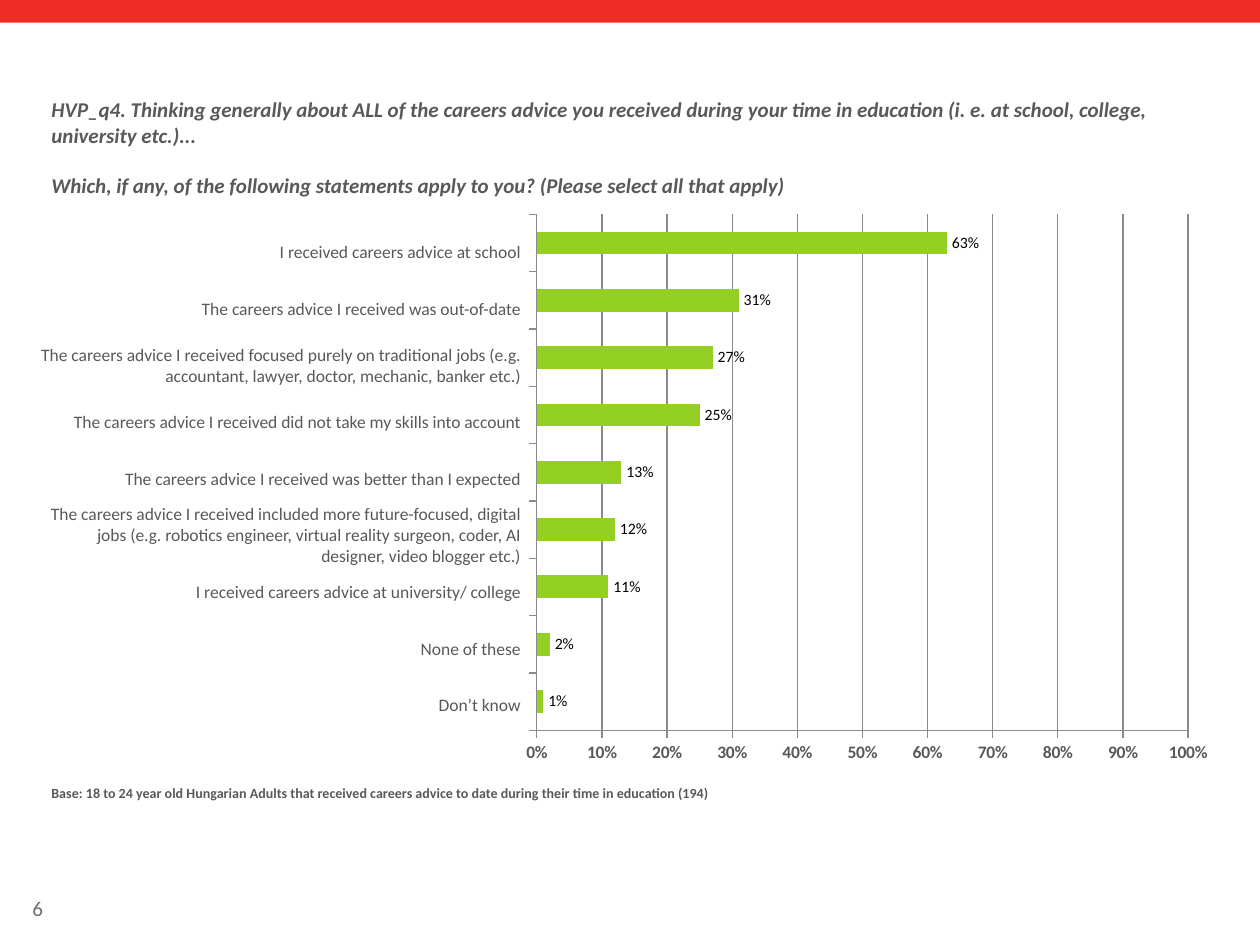
from lxml.etree import SubElement as Sub
from pptx import Presentation
from pptx.chart.data import CategoryChartData as Data
from pptx.dml.color import RGBColor as RGB
from pptx.enum.chart import XL_CHART_TYPE as Kind, XL_LABEL_POSITION as Spot
from pptx.enum.chart import XL_TICK_LABEL_POSITION as Tick, XL_TICK_MARK as Mark
from pptx.enum.shapes import MSO_SHAPE as Shape
from pptx.enum.text import MSO_ANCHOR as Anchor, PP_ALIGN as Align
from pptx.oxml.ns import qn
from pptx.util import Pt

ROWS = [
    ("I received careers advice at school", 0.63),
    ("The careers advice I received was out-of-date", 0.31),
    ("The careers advice I received focused purely on traditional jobs "
     "(e.g. accountant, lawyer, doctor, mechanic, banker etc.)", 0.27),
    ("The careers advice I received did not take my skills into account", 0.25),
    ("The careers advice I received was better than I expected", 0.13),
    ("The careers advice I received included more future-focused, digital jobs "
     "(e.g. robotics engineer, virtual reality surgeon, coder, AI designer, "
     "video blogger etc.)", 0.12),
    ("I received careers advice at university/ college", 0.11),
    ("None of these", 0.02),
    ("Don’t know", 0.01),
]
ASK = [
    "HVP_q4. Thinking generally about ALL of the careers advice you received "
    "during your time in education (i. e. at school, college, university etc.)...",
    "Which, if any, of the following statements apply to you? "
    "(Please select all that apply)",
]
BASE = ("Base: 18 to 24 year old Hungarian Adults that received careers advice "
        "to date during their time in education (194)")
PAGE = "6"
THEME = {
    "font": "Calibri", "chart": "Manrope",
    "band": RGB(0xEE, 0x2D, 0x27), "bar": RGB(0x93, 0xD0, 0x23),
    "ink": RGB(0x59, 0x59, 0x59), "page": RGB(0x6D, 0x6F, 0x71),
    "value": RGB(0, 0, 0), "line": RGB(0x8B, 0x8B, 0x8B),
    "head": 12, "label": 10, "mark": 9, "base": 8, "body": 18,
}
FRAME = {"x": 0.034, "y": 0.02, "w": 0.918, "h": 0.904}
TOP, STEP = 127.44, 32.4


def style(font, size, ink="ink", bold=False, face="font"):
    """Set the look of a font from the theme."""
    font.name, font.size, font.bold = THEME[face], Pt(THEME[size]), bold
    font.color.rgb = THEME[ink]


def write(slide, box, lines, size, ink="ink", bold=False, italic=False,
          align=Align.LEFT, anchor=Anchor.TOP, gap=0):
    """Add a text box with one paragraph for each line."""
    frame = slide.shapes.add_textbox(*map(Pt, box)).text_frame
    frame.word_wrap, frame.vertical_anchor = True, anchor
    frame.text = "\n".join(lines)
    for i, para in enumerate(frame.paragraphs):
        para.alignment = align
        para.space_before = Pt(gap if i else 0)
        for run in para.runs:
            style(run.font, size, ink, bold)
            run.font.italic = italic


def plot(slide):
    """Add the bar chart, lowest row first."""
    data = Data(number_format="0%")
    data.categories = [str(i + 1) for i in range(len(ROWS))]
    data.add_series("Series 1", [val for _, val in reversed(ROWS)])
    box = map(Pt, (293, 116, 405.4, 326.2))
    chart = slide.shapes.add_chart(Kind.BAR_CLUSTERED, *box, data).chart
    chart.has_legend = chart.has_title = False
    style(chart.font, "body", "page", face="chart")

    cat, val = chart.category_axis, chart.value_axis
    cat.tick_label_position, val.tick_label_position = Tick.NONE, Tick.LOW
    val.minimum_scale, val.maximum_scale, val.major_unit = 0, 1, 0.1
    val.has_major_gridlines = True
    val.tick_labels.number_format = "0%"
    val.tick_labels.number_format_is_linked = False
    for axis in (cat, val):
        axis.major_tick_mark, axis.minor_tick_mark = Mark.OUTSIDE, Mark.NONE
        style(axis.tick_labels.font, "label", bold=axis is val)
    for item in (cat.format, val.format, val.major_gridlines.format):
        item.line.color.rgb, item.line.width = THEME["line"], Pt(0.75)

    bars = chart.plots[0]
    bars.gap_width, bars.overlap, bars.vary_by_categories = 150, -10, False
    fill = bars.series[0].format.fill
    fill.solid()
    fill.fore_color.rgb = THEME["bar"]
    bars.has_data_labels = True
    marks = bars.data_labels
    marks.show_value, marks.position = True, Spot.OUTSIDE_END
    marks.number_format, marks.number_format_is_linked = "0%", False
    style(marks.font, "mark", "value")

    area = cat._element.getparent()
    for old in area.findall(qn("c:layout")):
        area.remove(old)
    out = Sub(area, qn("c:layout"))
    area.insert(0, out)
    man = Sub(out, qn("c:manualLayout"))
    modes = {"layoutTarget": "inner", "xMode": "edge", "yMode": "edge"}
    for name, val in {**modes, **FRAME}.items():
        Sub(man, qn("c:" + name)).set("val", str(val))


def main():
    """Build the slide and save it."""
    deck = Presentation()
    deck.slide_width, deck.slide_height = Pt(720), Pt(540)
    slide = deck.slides.add_slide(deck.slide_layouts[6])
    band = slide.shapes.add_shape(Shape.RECTANGLE, 0, 0, Pt(720), Pt(12.96))
    band.shadow.inherit = False
    band.fill.solid()
    band.fill.fore_color.rgb = THEME["band"]
    band.line.fill.background()
    write(slide, (11.52, 508.32, 55.44, 21.6), [PAGE], "head", "page",
          anchor=Anchor.MIDDLE)
    write(slide, (22.32, 51.84, 676, 64.8), ASK, "head", bold=True,
          italic=True, gap=14.6)
    plot(slide)
    for i, (text, _) in enumerate(ROWS):
        write(slide, (11.52, TOP + i * STEP, 293, STEP), [text], "label",
              align=Align.RIGHT, anchor=Anchor.MIDDLE)
    write(slide, (22.32, 444.96, 676, 31), [BASE], "base", bold=True)
    deck.save("out.pptx")


if __name__ == "__main__":
    main()
